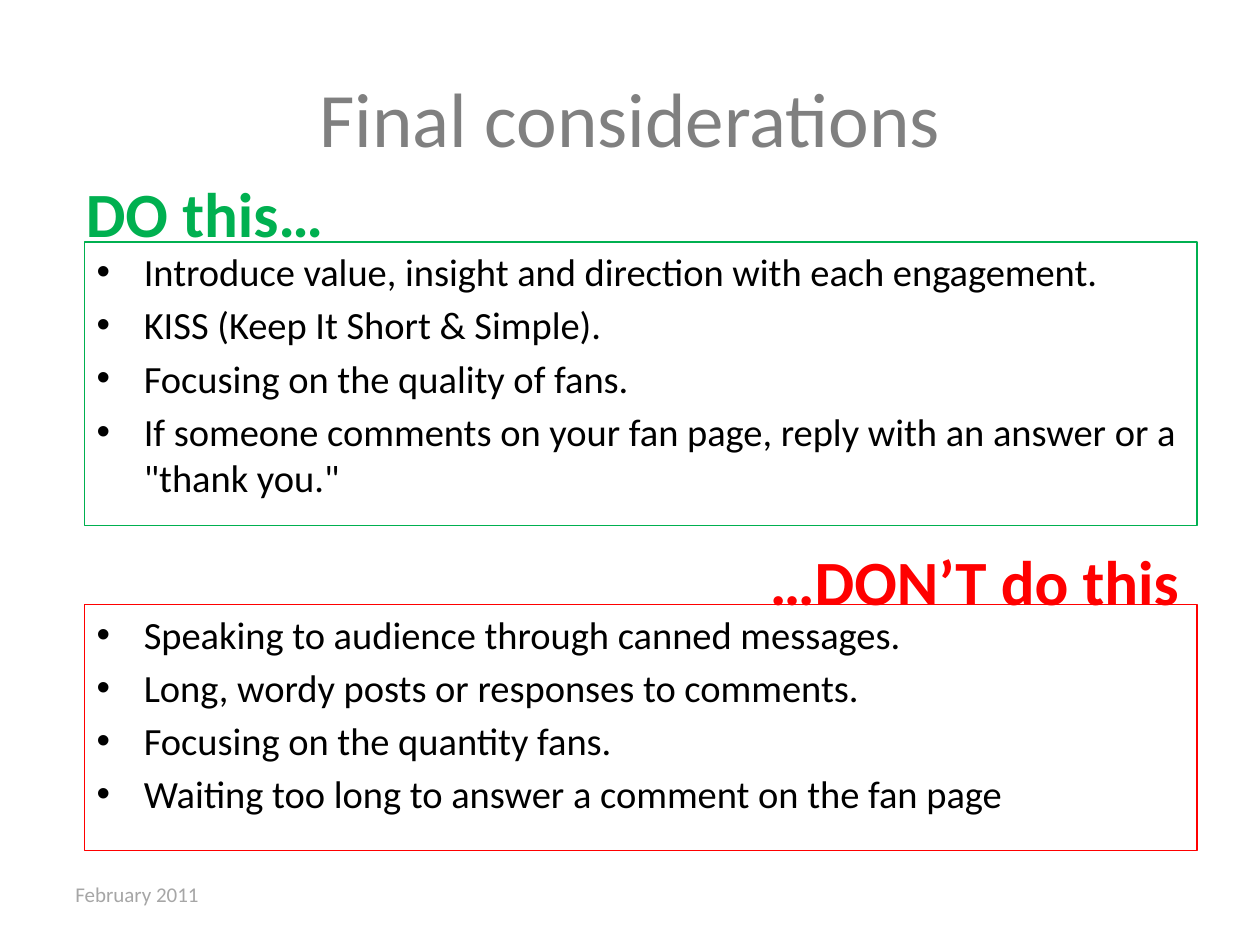
from lxml import etree
from pptx import Presentation
from pptx.dml.color import RGBColor
from pptx.enum.shapes import MSO_SHAPE
from pptx.enum.text import MSO_ANCHOR, PP_ALIGN
from pptx.oxml.ns import qn
from pptx.util import Cm, Pt

RECT = MSO_SHAPE.RECTANGLE
TOP, MIDDLE, BOTTOM = MSO_ANCHOR.TOP, MSO_ANCHOR.MIDDLE, MSO_ANCHOR.BOTTOM
LEFT, CENTER, RIGHT = PP_ALIGN.LEFT, PP_ALIGN.CENTER, PP_ALIGN.RIGHT

GREEN = RGBColor(0x00, 0xB0, 0x50)
RED = RGBColor(0xFF, 0x00, 0x00)
BLACK = RGBColor(0x00, 0x00, 0x00)
WHITE = RGBColor(0xFF, 0xFF, 0xFF)
GRAY = RGBColor(0x80, 0x80, 0x80)
LIGHT_GRAY = RGBColor(0xA6, 0xA6, 0xA6)

# Content
TITLE = "Final considerations"
DATE = "February 2011"
DO_HEADING = "DO this…"
DO_ITEMS = [
    "Introduce value, insight and direction with each engagement.",
    "KISS (Keep It Short & Simple).",
    "Focusing on the quality of fans.",
    'If someone comments on your fan page, reply with an answer or a "thank you."',
]
DONT_HEADING = "…DON’T do this"
DONT_ITEMS = [
    "Speaking to audience through canned messages.",
    "Long, wordy posts or responses to comments.",
    "Focusing on the quantity fans.",
    "Waiting too long to answer a comment on the fan page",
]

# Layout in centimetres
BOX_LEFT, BOX_WIDTH = 1.7, 22.43
HEAD_WIDTH, HEAD_HEIGHT = 11.23, 1.78
INDENT = 0.95


def add_bullet(p):
    pPr = p._p.get_or_add_pPr()
    pPr.set("marL", str(Cm(INDENT)))
    pPr.set("indent", str(-Cm(INDENT)))
    etree.SubElement(pPr, qn("a:buFont")).set("typeface", "Arial")
    etree.SubElement(pPr, qn("a:buChar")).set("char", "•")


def write(sp, lines, size, color, bold=False, align=LEFT, anchor=TOP, bullets=False):
    tf = sp.text_frame
    tf.word_wrap = True
    tf.vertical_anchor = anchor
    for i, line in enumerate(lines):
        p = tf.paragraphs[0] if i == 0 else tf.add_paragraph()
        p.alignment = align
        if i:
            p.space_before = Pt(4)
        if bullets:
            add_bullet(p)
        r = p.add_run()
        r.text = line
        r.font.name = "Calibri"
        r.font.size = Pt(size)
        r.font.bold = bold
        r.font.color.rgb = color


def add_text(s, text, left, top, width, height, **fmt):
    sp = s.shapes.add_textbox(Cm(left), Cm(top), Cm(width), Cm(height))
    write(sp, [text], **fmt)
    return sp


def add_list(s, items, top, height, line, fill=None):
    sp = s.shapes.add_shape(RECT, Cm(BOX_LEFT), Cm(top), Cm(BOX_WIDTH), Cm(height))
    sp.shadow.inherit = False
    if fill is None:
        sp.fill.background()
    else:
        sp.fill.solid()
        sp.fill.fore_color.rgb = fill
    sp.line.color.rgb = line
    sp.line.width = Pt(0.75)
    write(sp, items, size=22, color=BLACK, bullets=True)


prs = Presentation()
prs.slide_width, prs.slide_height = Cm(25.4), Cm(19.05)
s = prs.slides.add_slide(prs.slide_layouts[6])

# Title
add_text(s, TITLE, 1.27, 0.76, 22.86, 3.18,
         size=44, color=GRAY, align=CENTER, anchor=MIDDLE)

# Headings and lists; the white list box lies over its heading
add_text(s, DO_HEADING, 1.48, 3.38, HEAD_WIDTH, HEAD_HEIGHT,
         size=36, color=GREEN, bold=True, anchor=BOTTOM)
add_list(s, DONT_ITEMS, 12.19, 4.95, RED)
sp = add_text(s, DONT_HEADING, BOX_LEFT + BOX_WIDTH - HEAD_WIDTH, 10.8,
              HEAD_WIDTH, HEAD_HEIGHT,
              size=36, color=RED, bold=True, align=RIGHT, anchor=BOTTOM)
sp.text_frame.margin_right = Cm(0.36)
add_list(s, DO_ITEMS, 4.88, 5.72, GREEN, fill=WHITE)

# Date
add_text(s, DATE, 1.27, 17.65, 5.92, 1.02, size=12, color=LIGHT_GRAY)

prs.save("out.pptx")
